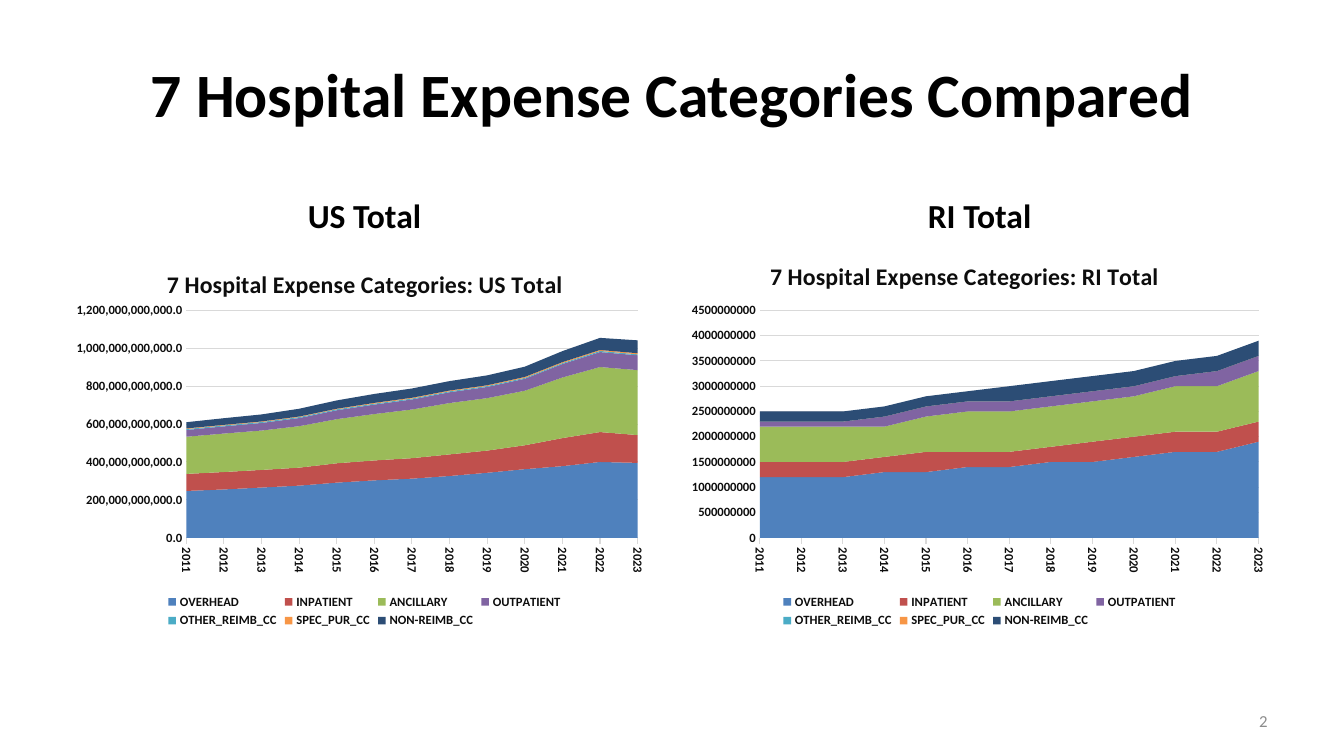
from lxml.etree import SubElement
from pptx import Presentation
from pptx.chart.data import CategoryChartData
from pptx.dml.color import RGBColor
from pptx.enum.chart import XL_CHART_TYPE, XL_LEGEND_POSITION, XL_TICK_MARK
from pptx.enum.text import MSO_ANCHOR, PP_ALIGN
from pptx.oxml.ns import qn
from pptx.util import Inches, Pt

TITLE = "7 Hospital Expense Categories Compared"
PAGE = "2"
YEARS = [str(year) for year in range(2011, 2024)]
CATEGORIES = {
    "OVERHEAD": "4F81BD", "INPATIENT": "C0504D", "ANCILLARY": "9BBB59",
    "OUTPATIENT": "8064A2", "OTHER_REIMB_CC": "4BACC6",
    "SPEC_PUR_CC": "F79646", "NON-REIMB_CC": "2C4D75",
}
PANELS = [
    {
        "heading": "US Total",
        "title": "7 Hospital Expense Categories: US Total",
        "title_at": {"x": 0.16, "y": 0.06},
        "plot_at": {"x": 0.2, "y": 0.18, "w": 0.76, "h": 0.58},
        "format": "#,##0.0", "unit": 10**9, "max": 1200, "step": 200,
        "values": [
            [247, 255, 265, 275, 291, 303, 312, 326, 343, 362, 378, 400, 395],
            [90, 92, 93, 95, 102, 105, 108, 114, 117, 126, 148, 158, 147],
            [196, 203, 208, 219, 233, 245, 257, 271, 277, 288, 320, 343, 343],
            [36, 38, 40, 43, 47, 50, 53, 57, 59, 63, 71, 79, 78],
            [5, 5, 5, 5, 5, 5, 5, 5, 5, 5, 5, 6, 5],
            [3, 3, 3, 3, 3, 4, 4, 4, 4, 5, 5, 5, 6],
            [33, 35, 37, 41, 44, 47, 49, 50, 52, 54, 58, 64, 68],
        ],
    },
    {
        "heading": "RI Total",
        "title": "7 Hospital Expense Categories: RI Total",
        "title_at": {"x": 0.14, "y": 0.04},
        "plot_at": {"x": 0.13, "y": 0.18, "w": 0.84, "h": 0.58},
        "format": "General", "unit": 10**8, "max": 45, "step": 5,
        "values": [
            [12, 12, 12, 13, 13, 14, 14, 15, 15, 16, 17, 17, 19],
            [3, 3, 3, 3, 4, 3, 3, 3, 4, 4, 4, 4, 4],
            [7, 7, 7, 6, 7, 8, 8, 8, 8, 8, 9, 9, 10],
            [1, 1, 1, 2, 2, 2, 2, 2, 2, 2, 2, 3, 3],
            [0] * 13,
            [0] * 13,
            [2, 2, 2, 2, 2, 2, 3, 3, 3, 3, 3, 3, 3],
        ],
    },
]
LEFT, PITCH, WIDTH = 0.67, 6.1, 5.89


def rgb(color):
    return RGBColor.from_string(color)


def set_font(font, size, color, bold=True):
    for key, value in {"name": "Calibri", "size": Pt(size), "bold": bold}.items():
        setattr(font, key, value)
    font.color.rgb = rgb(color)


def set_text(sp, text, size, color, align, anchor, bold=True):
    tf = sp.text_frame
    for key, value in {"word_wrap": True, "vertical_anchor": anchor}.items():
        setattr(tf, key, value)
    p = tf.paragraphs[0]
    p.alignment = align
    r = p.add_run()
    r.text = text
    set_font(r.font, size, color, bold)


def add_text(s, box, *args):
    set_text(s.shapes.add_textbox(*map(Inches, box)), *args)


def set_layout(parent, index, place):
    for old in parent.findall(qn("c:layout")):
        parent.remove(old)
    layout = SubElement(parent, qn("c:layout"))
    manual = SubElement(layout, qn("c:manualLayout"))
    if "w" in place:
        SubElement(manual, qn("c:layoutTarget")).set("val", "inner")
    for key in ("x", "y"):
        SubElement(manual, qn(f"c:{key}Mode")).set("val", "edge")
    for key, value in place.items():
        SubElement(manual, qn(f"c:{key}")).set("val", str(value))
    parent.insert(index, layout)


def format_line(line):
    line.color.rgb = rgb("D9D9D9")
    line.width = Pt(0.75)


def add_area_chart(s, panel, left):
    data = CategoryChartData()
    data.categories = YEARS
    for name, values in zip(CATEGORIES, panel["values"]):
        data.add_series(name, [value * panel["unit"] for value in values])
    chart = s.shapes.add_chart(
        XL_CHART_TYPE.AREA_STACKED, Inches(left), Inches(2.38),
        Inches(WIDTH), Inches(3.89), data).chart
    set_font(chart.font, 10, "0D0D0D")
    chart.plots[0].vary_by_categories = False
    for series, color in zip(chart.plots[0].series, CATEGORIES.values()):
        series.format.fill.solid()
        series.format.fill.fore_color.rgb = rgb(color)

    chart.has_title = True
    title = chart.chart_title
    r = title.text_frame.paragraphs[0].add_run()
    r.text = panel["title"]
    set_font(r.font, 17, "0D0D0D")
    set_layout(title._element, 1, panel["title_at"])
    plot_area = chart._chartSpace.chart.plotArea
    set_layout(plot_area, 0, panel["plot_at"])

    years, amounts = chart.category_axis, chart.value_axis
    for axis in (years, amounts):
        axis.minor_tick_mark = XL_TICK_MARK.NONE
        set_font(axis.tick_labels.font, 9, "0D0D0D")
    years.major_tick_mark = XL_TICK_MARK.OUTSIDE
    format_line(years.format.line)
    years._element.txPr.bodyPr.set("rot", "5400000")
    for key, value in {
        "minimum_scale": 0,
        "maximum_scale": panel["max"] * panel["unit"],
        "major_unit": panel["step"] * panel["unit"],
        "major_tick_mark": XL_TICK_MARK.NONE,
        "has_major_gridlines": True,
    }.items():
        setattr(amounts, key, value)
    amounts.format.line.fill.background()
    format_line(amounts.major_gridlines.format.line)
    amounts.tick_labels.number_format = panel["format"]
    amounts.tick_labels.number_format_is_linked = False
    for cross in plot_area.iter(qn("c:crossBetween")):
        cross.set("val", "midCat")

    chart.has_legend = True
    chart.legend.position = XL_LEGEND_POSITION.BOTTOM
    chart.legend.include_in_layout = False
    set_font(chart.legend.font, 9, "0D0D0D")


def main():
    prs = Presentation()
    prs.slide_width, prs.slide_height = Inches(13.33), Inches(7.5)
    s = prs.slides.add_slide(prs.slide_layouts[5])
    title = s.shapes.title
    for key, value in {"left": LEFT, "top": 0.3, "width": 12, "height": 1.25}.items():
        setattr(title, key, Inches(value))
    set_text(title, TITLE, 44, "000000", PP_ALIGN.CENTER, MSO_ANCHOR.MIDDLE)
    for i, panel in enumerate(PANELS):
        left = LEFT + i * PITCH
        add_text(s, (left, 1.68, WIDTH, 0.7), panel["heading"], 24, "000000",
                 PP_ALIGN.CENTER, MSO_ANCHOR.BOTTOM)
        add_area_chart(s, panel, left)
    add_text(s, (9.56, 6.95, 3.11, 0.4), PAGE, 12, "8C8C8C",
             PP_ALIGN.RIGHT, MSO_ANCHOR.MIDDLE, False)
    prs.save("out.pptx")


if __name__ == "__main__":
    main()
